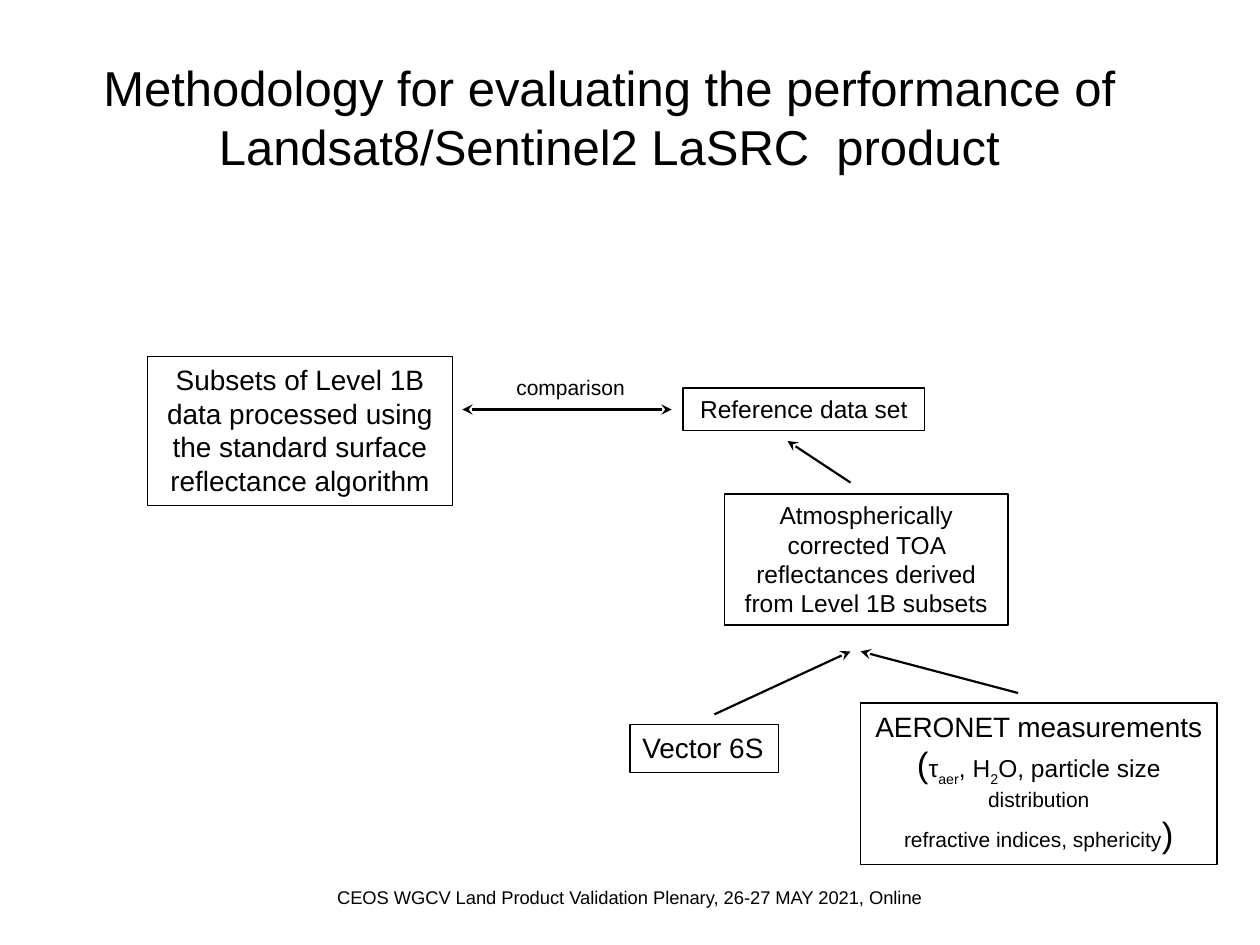
import pptx
import pptx.util
import pptx.dml.color
import pptx.enum.shapes
import pptx.enum.text
import pptx.oxml.ns
import lxml.etree

Inches = pptx.util.Inches
Pt = pptx.util.Pt
BLACK = pptx.dml.color.RGBColor(0, 0, 0)
WHITE = pptx.dml.color.RGBColor(255, 255, 255)
CENTER = pptx.enum.text.PP_ALIGN.CENTER
LEFT = pptx.enum.text.PP_ALIGN.LEFT
TOP = pptx.enum.text.MSO_ANCHOR.TOP
MIDDLE = pptx.enum.text.MSO_ANCHOR.MIDDLE
qn = pptx.oxml.ns.qn


def style_paragraph(paragraph, size, alignment):
    paragraph.alignment = alignment
    paragraph.font.name = "Arial"
    paragraph.font.color.rgb = BLACK
    paragraph.font.size = Pt(size)


def add_box(left, top, width, height):
    shape = slide.shapes.add_shape(
        pptx.enum.shapes.MSO_SHAPE.RECTANGLE,
        Inches(left), Inches(top), Inches(width), Inches(height),
    )
    shape.shadow.inherit = False
    shape.fill.solid()
    shape.fill.fore_color.rgb = WHITE
    shape.line.color.rgb = BLACK
    shape.line.width = Pt(0.75)
    shape.text_frame.word_wrap = True
    shape.text_frame.vertical_anchor = TOP
    return shape


presentation = pptx.Presentation()
presentation.slide_width = Inches(10)
presentation.slide_height = Inches(7.5)
slide = presentation.slides.add_slide(presentation.slide_layouts[6])

labels = [
    ("Methodology for evaluating the performance of Landsat8/Sentinel2 LaSRC  product",
     0.5, 0.3, 8.67, 1.25, 28, CENTER, MIDDLE),
    ("comparison", 4, 2.92, 1.17, 0.3, 12, LEFT, TOP),
    ("CEOS WGCV Land Product Validation Plenary, 26-27 MAY 2021, Online",
     0, 6.98, 10, 0.52, 10.5, CENTER, TOP),
]
for text, left, top, width, height, size, alignment, anchor in labels:
    label = slide.shapes.add_textbox(Inches(left), Inches(top), Inches(width), Inches(height))
    label.text_frame.word_wrap = True
    label.text_frame.vertical_anchor = anchor
    label.text_frame.text = text
    style_paragraph(label.text_frame.paragraphs[0], size, alignment)

boxes = [
    ("Subsets of Level 1B data processed using the standard surface reflectance algorithm",
     1.17, 2.83, 2.42, 1.18, 16, CENTER),
    ("Reference data set", 5.42, 3.08, 1.92, 0.34, 14, CENTER),
    ("Atmospherically corrected TOA reflectances derived from Level 1B subsets",
     5.75, 3.92, 2.25, 1.04, 14, CENTER),
    ("Vector 6S", 5, 5.75, 1.18, 0.38, 16, LEFT),
]
for text, left, top, width, height, size, alignment in boxes:
    box = add_box(left, top, width, height)
    box.text_frame.text = text
    style_paragraph(box.text_frame.paragraphs[0], size, alignment)

aeronet_lines = [
    (16, [("AERONET measurements", 16, False)]),
    (14, [("(", 20, False), ("τ", 14, False), ("aer", 14, True), (", H", 14, False),
          ("2", 14, True), ("O, particle size ", 14, False), ("distribution", 12, False)]),
    (12, [("refractive indices, sphericity", 12, False), (")", 20, False)]),
]
aeronet_frame = add_box(6.83, 5.58, 2.83, 1.28).text_frame
for index, (base_size, runs) in enumerate(aeronet_lines):
    paragraph = aeronet_frame.add_paragraph() if index else aeronet_frame.paragraphs[0]
    style_paragraph(paragraph, base_size, CENTER)
    for text, size, subscript in runs:
        run = paragraph.add_run()
        run.text = text
        if size != base_size:
            run.font.size = Pt(size)
        if subscript:
            run._r.get_or_add_rPr().set("baseline", "-25000")

arrows = [
    (3.67, 3.25, 5.33, 3.25, ["headEnd", "tailEnd"]),
    (6.75, 3.83, 6.25, 3.5, ["tailEnd"]),
    (5.67, 5.67, 6.75, 5.17, ["tailEnd"]),
    (8.08, 5.5, 6.83, 5.17, ["tailEnd"]),
]
for start_x, start_y, end_x, end_y, ends in arrows:
    arrow = slide.shapes.add_connector(
        pptx.enum.shapes.MSO_CONNECTOR.STRAIGHT,
        Inches(start_x), Inches(start_y), Inches(end_x), Inches(end_y),
    )
    arrow.line.color.rgb = BLACK
    arrow.line.width = Pt(1.25)
    line = arrow.line._get_or_add_ln()
    for end in ends:
        lxml.etree.SubElement(line, qn(f"a:{end}"), type="stealth", w="med", len="med")
    lxml.etree.SubElement(arrow._element.spPr, qn("a:effectLst"))

presentation.save("out.pptx")
